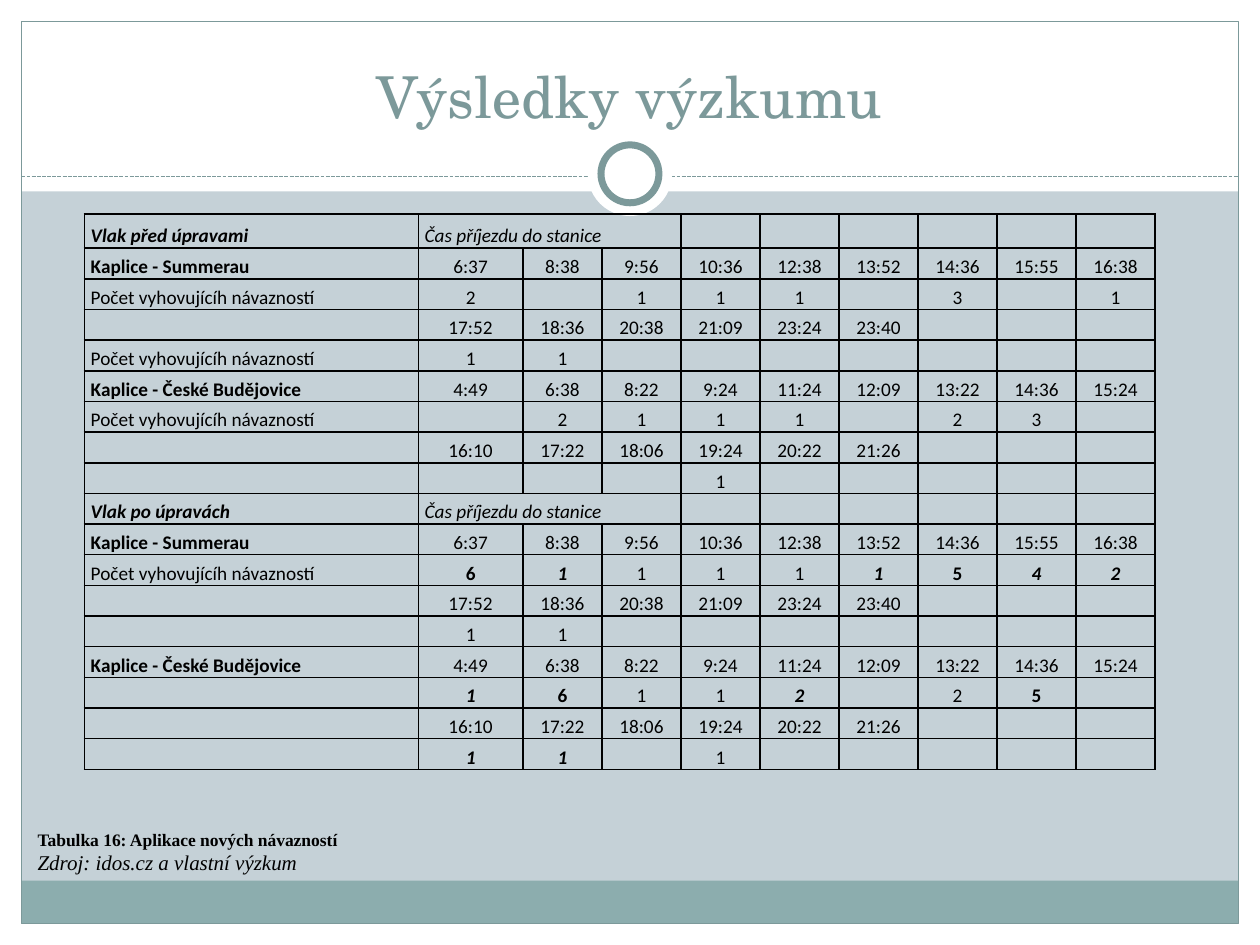
from collections import namedtuple

from lxml import etree
from pptx import Presentation
from pptx import util as u
from pptx.dml.color import RGBColor
from pptx.enum import dml, shapes, text
from pptx.oxml import ns

WHITE = RGBColor(0xFF, 0xFF, 0xFF)
BLACK = RGBColor(0, 0, 0)
MIST = RGBColor(0xC5, 0xD1, 0xD7)
TEAL = RGBColor(0x7C, 0x99, 0x9A)
FOOTER = RGBColor(0x8C, 0xAD, 0xAE)

Box = namedtuple("Box", "left top width height")
PAGE = Box(0, 0, 10, 7.5)
MARGIN = 0.17
HEADER_HEIGHT = 1.52
FOOTER_HEIGHT = 0.34

ARRIVAL = "_Čas příjezdu do stanice"
COUNT = "Počet vyhovujícíh návazností"
TO_SUMMERAU = "*Kaplice - Summerau"
TO_BUDEJOVICE = "*Kaplice - České Budějovice"
SUMMERAU_DAY = "6:37 8:38 9:56 10:36 12:38 13:52 14:36 15:55 16:38"
SUMMERAU_EVENING = "17:52 18:36 20:38 21:09 23:24 23:40"
BUDEJOVICE_DAY = "4:49 6:38 8:22 9:24 11:24 12:09 13:22 14:36 15:24"
BUDEJOVICE_EVENING = "16:10 17:22 18:06 19:24 20:22 21:26"

# A leading * is bold, _ is italic; a lone - is an empty cell.
# A row without values is a section heading.
ROWS = [
    ("*_Vlak před úpravami", None),
    (TO_SUMMERAU, SUMMERAU_DAY),
    (COUNT, "2 - 1 1 1 - 3 - 1"),
    ("", SUMMERAU_EVENING),
    (COUNT, "1 1"),
    (TO_BUDEJOVICE, BUDEJOVICE_DAY),
    (COUNT, "- 2 1 1 1 - 2 3"),
    ("", BUDEJOVICE_EVENING),
    ("", "- - - 1"),
    ("*_Vlak po úpravách", None),
    (TO_SUMMERAU, SUMMERAU_DAY),
    (COUNT, "*6 *_1 1 1 1 *_1 *5 *_4 *_2"),
    ("", SUMMERAU_EVENING),
    ("", "1 1"),
    (TO_BUDEJOVICE, BUDEJOVICE_DAY),
    ("", "*_1 *6 1 1 *_2 - 2 *5"),
    ("", BUDEJOVICE_EVENING),
    ("", "*_1 *_1 - 1"),
]
VALUE_COLUMNS = 9


def inches(box):
    return [u.Inches(length) for length in box]


def add_shape(page, box, fill=None, line=None, weight=0.75,
              kind=shapes.MSO_SHAPE.RECTANGLE):
    shape = page.shapes.add_shape(kind, *inches(box))
    shape.shadow.inherit = False
    if fill is None:
        shape.fill.background()
    else:
        shape.fill.solid()
        shape.fill.fore_color.rgb = fill
    if line is None:
        shape.line.fill.background()
    else:
        shape.line.color.rgb = line
        shape.line.width = u.Pt(weight)


def add_circle(page, x, y, diameter, **style):
    """Centre a white circle on the point x, y."""
    box = Box(x - diameter / 2, y - diameter / 2, diameter, diameter)
    add_shape(page, box, WHITE, kind=shapes.MSO_SHAPE.OVAL, **style)


def add_backdrop(page, box):
    page.background.fill.solid()
    page.background.fill.fore_color.rgb = MIST
    right, bottom = box.width - MARGIN, box.height - MARGIN
    for band in (Box(0, bottom, box.width, MARGIN),
                 Box(0, 0, box.width, HEADER_HEIGHT),
                 Box(0, 0, MARGIN, box.height),
                 Box(right, 0, MARGIN, box.height)):
        add_shape(page, band, WHITE)
    inner_width = box.width - 2 * MARGIN
    add_shape(page, Box(MARGIN, bottom - FOOTER_HEIGHT, inner_width, FOOTER_HEIGHT), FOOTER)
    add_shape(page, Box(MARGIN, MARGIN, inner_width, box.height - 2 * MARGIN), line=TEAL)

    rule_y = 1.4
    rule = page.shapes.add_connector(
        shapes.MSO_CONNECTOR.STRAIGHT,
        *inches((MARGIN, rule_y, right, rule_y)))
    rule.line.color.rgb = TEAL
    rule.line.width = u.Pt(0.75)
    rule.line.dash_style = dml.MSO_LINE.SQUARE_DOT
    etree.SubElement(rule._element.spPr, ns.qn("a:effectLst"))
    add_circle(page, box.width / 2, 1.38, 0.67)
    add_circle(page, box.width / 2, 1.38, 0.46, line=TEAL, weight=4)


def set_font(para, name, size, color, bold=False, italic=False):
    font = para.font
    font.name, font.size = name, u.Pt(size)
    font.bold, font.italic = bold, italic
    font.color.rgb = color


def add_text(page, box, anchor):
    frame = page.shapes.add_textbox(*inches(box)).text_frame
    frame.word_wrap = True
    frame.vertical_anchor = anchor
    return frame


def add_title(page, box):
    para = add_text(page, box, text.MSO_ANCHOR.BOTTOM).paragraphs[0]
    para.text = "Výsledky výzkumu"
    para.alignment = text.PP_ALIGN.CENTER
    set_font(para, "TeX Gyre Schola", 33, TEAL)


def add_caption(page, box):
    frame = add_text(page, box, text.MSO_ANCHOR.MIDDLE)
    frame.text = "Tabulka 16: Aplikace nových návazností\nZdroj: idos.cz a vlastní výzkum"
    heading, source = frame.paragraphs
    set_font(heading, "Times New Roman", 10, BLACK, bold=True)
    set_font(source, "Times New Roman", 12, BLACK, italic=True)
    for para in frame.paragraphs:
        para.alignment = text.PP_ALIGN.JUSTIFY


def add_borders(cell):
    properties = cell._tc.get_or_add_tcPr()
    for position, side in enumerate(("a:lnL", "a:lnR", "a:lnT", "a:lnB")):
        line = etree.Element(ns.qn(side), w=str(u.Pt(1)))
        fill = etree.SubElement(line, ns.qn("a:solidFill"))
        etree.SubElement(fill, ns.qn("a:srgbClr"), val=str(BLACK))
        properties.insert(position, line)


def fill_cell(cell, marked, centred):
    cell.fill.background()
    add_borders(cell)
    cell.margin_left = cell.margin_right = u.Inches(0.05)
    cell.margin_top = cell.margin_bottom = 0
    cell.vertical_anchor = text.MSO_ANCHOR.BOTTOM
    para = cell.text_frame.paragraphs[0]
    para.line_spacing = 1.15
    if centred:
        para.alignment = text.PP_ALIGN.CENTER
    wording = marked.lstrip("*_")
    if wording:
        para.text = wording
    else:
        # The end mark keeps an empty row from growing to the default size.
        etree.SubElement(para._p, ns.qn("a:endParaRPr"), sz="1100")
    set_font(para, "Calibri", 11, BLACK, bold="*" in marked, italic="_" in marked)


def add_timetable(page, box):
    table = page.shapes.add_table(len(ROWS), VALUE_COLUMNS + 1, *inches(box)).table
    table.first_row = table.horz_banding = False
    widths = [2.65, 0.83]
    widths += [(box.width - sum(widths)) / (VALUE_COLUMNS - 1)] * (VALUE_COLUMNS - 1)
    for column, width in zip(table.columns, widths):
        column.width = u.Inches(width)
    first_height = 0.27
    for row in table.rows:
        row.height = u.Inches((box.height - first_height) / (len(ROWS) - 1))
    table.rows[0].height = u.Inches(first_height)

    for index, (label, values) in enumerate(ROWS):
        is_heading = values is None
        entries = [ARRIVAL] if is_heading else values.replace("-", "_").split()
        entries += [""] * (VALUE_COLUMNS - len(entries))
        for column, entry in enumerate([label] + entries):
            fill_cell(table.cell(index, column), entry, column > 0 and not is_heading)
        if is_heading:
            table.cell(index, 1).merge(table.cell(index, 3))


def main():
    deck = Presentation()
    deck.slide_width, deck.slide_height = inches((PAGE.width, PAGE.height))
    page = deck.slides.add_slide(deck.slide_layouts[6])
    add_backdrop(page, PAGE)
    add_title(page, Box(0.33, 0.25, 9.33, 0.83))
    add_caption(page, Box(0.2, 6.51, 9.6, 0.5))
    add_timetable(page, Box(0.67, 1.7, 8.5, 4.41))
    deck.save("out.pptx")


if __name__ == "__main__":
    main()
